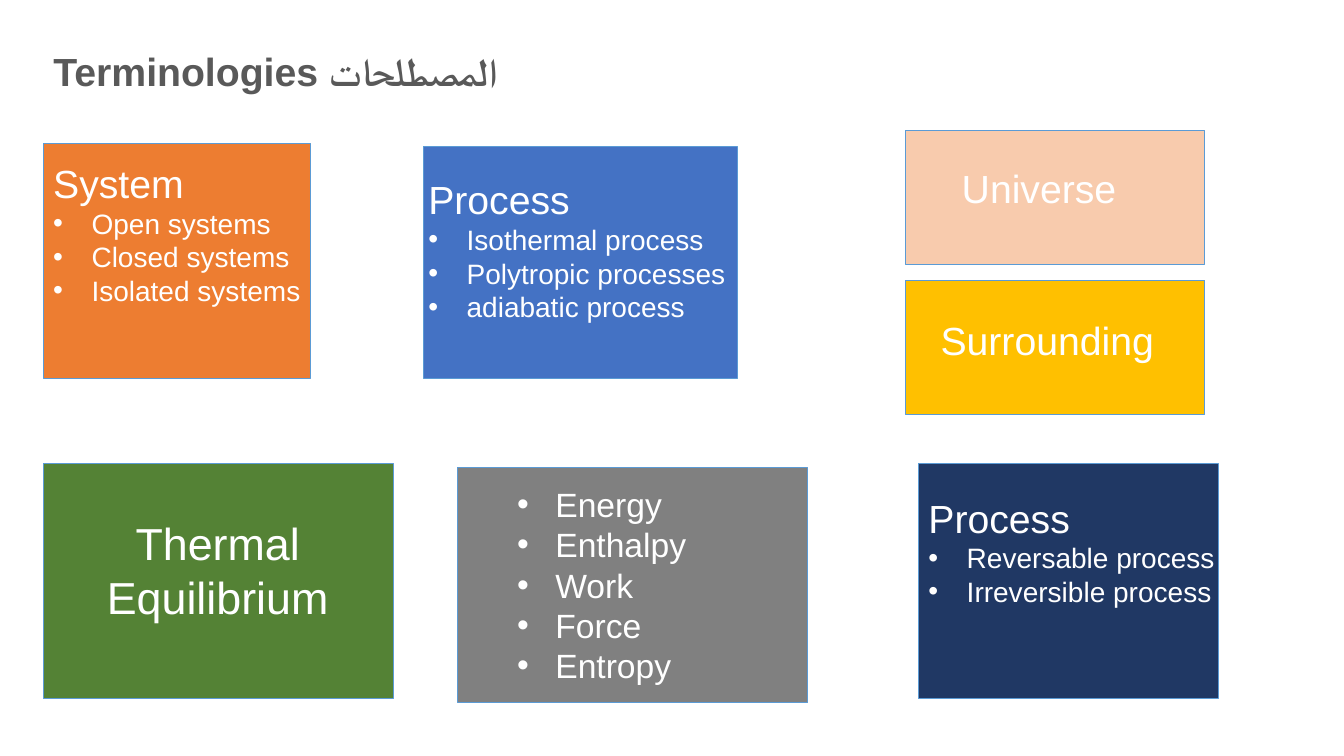
from dataclasses import dataclass
from lxml.etree import SubElement
from pptx import Presentation
from pptx.dml.color import RGBColor
from pptx.enum.shapes import MSO_SHAPE
from pptx.enum.text import MSO_ANCHOR, MSO_AUTO_SIZE, PP_ALIGN
from pptx.oxml.ns import qn
from pptx.util import Inches, Pt


@dataclass(frozen=True)
class Theme:
    """Colours, font and type sizes of the slide."""
    font: str = "Arial"
    title: str = "595959"
    text: str = "FFFFFF"
    edge: str = "5B9BD5"
    orange: str = "ED7D31"
    blue: str = "4472C4"
    gold: str = "FFC000"
    green: str = "548235"
    navy: str = "203864"
    gray: str = "808080"
    peach: str = "F8CBAD"
    large: int = 32
    head: int = 28
    list: int = 24
    item: int = 20


class Board:
    """Draws titles, cards and text on one slide."""

    def __init__(self, slide, theme):
        """Keep the slide and its theme."""
        self.slide = slide
        self.theme = theme

    def style(self, para, size, color, bold=False):
        """Set the font of a paragraph."""
        font = para.font
        font.name = self.theme.font
        font.size = Pt(size)
        font.bold = bold
        font.color.rgb = RGBColor.from_string(color)

    def title(self, text, place):
        """Fill and place the title."""
        shape = self.slide.shapes.title
        shape.left, shape.top, shape.width, shape.height = map(Inches, place)
        frame = shape.text_frame
        frame.text = text
        frame.word_wrap = True
        frame.auto_size = MSO_AUTO_SIZE.NONE
        frame.vertical_anchor = MSO_ANCHOR.TOP
        para = frame.paragraphs[0]
        para.alignment = PP_ALIGN.LEFT
        para.line_spacing = 1.0
        self.style(para, self.theme.head, self.theme.title, True)
        props = para._p.pPr.find(qn("a:defRPr"))
        SubElement(props, qn("a:cs"), typeface=self.theme.font)

    def card(self, color, place):
        """Draw a filled rectangle."""
        shape = self.slide.shapes.add_shape(
            MSO_SHAPE.RECTANGLE, *map(Inches, place))
        shape.shadow.inherit = False
        shape.fill.solid()
        shape.fill.fore_color.rgb = RGBColor.from_string(color)
        shape.line.color.rgb = RGBColor.from_string(self.theme.edge)
        shape.line.width = Pt(0.5)

    def bullet(self, para):
        """Give a paragraph a hanging bullet."""
        props = para._p.get_or_add_pPr()
        props.set("marL", str(Inches(0.38)))
        props.set("indent", str(-Inches(0.38)))
        SubElement(props, qn("a:buFont"), typeface=self.theme.font)
        SubElement(props, qn("a:buChar"), char="•")

    def text(self, place, heads=(), items=(), size=28, small=20, align=PP_ALIGN.LEFT):
        """Write heading lines, then bulleted items."""
        frame = self.slide.shapes.add_textbox(*map(Inches, place)).text_frame
        frame.word_wrap = True
        lines = [(head, False) for head in heads]
        lines += [(item, True) for item in items]
        for num, (line, dot) in enumerate(lines):
            para = frame.add_paragraph() if num else frame.paragraphs[0]
            para.text = line
            para.alignment = align
            if dot:
                self.bullet(para)
            self.style(para, small if dot else size, self.theme.text)


def main():
    """Build and save the slide."""
    deck = Presentation()
    deck.slide_width, deck.slide_height = Inches(13.33), Inches(7.5)
    theme = Theme()
    board = Board(deck.slides.add_slide(deck.slide_layouts[5]), theme)
    board.title("Terminologies المصطلحات", (0.43, 0.42, 6.66, 0.57))

    topics = [
        (theme.orange, (0.43, 1.42, 2.65, 2.33), (0.43, 1.53, 2.76, 1.99), "System",
         ["Open systems", "Closed systems", "Isolated systems"]),
        (theme.blue, (4.2, 1.45, 3.11, 2.3), (4.15, 1.69, 3.4, 1.92), "Process",
         ["Isothermal process", "Polytropic processes", "adiabatic process"]),
        (theme.gold, (8.98, 2.78, 2.97, 1.33), (9.23, 3.09, 3.11, 0.91),
         "Surrounding", []),
        (theme.navy, (9.11, 4.6, 2.97, 2.33), (9.11, 4.85, 3.11, 1.58), "Process",
         ["Reversable process", "Irreversible process"]),
        (theme.peach, (8.98, 1.29, 2.97, 1.33), (9.44, 1.58, 3.11, 0.91),
         "Universe", []),
    ]
    for color, card, place, head, items in topics:
        board.card(color, card)
        board.text(place, [head], items, theme.head, theme.item)

    board.card(theme.green, (0.43, 4.6, 3.47, 2.33))
    board.text((0.5, 5.07, 3.32, 1.18), ["Thermal", "Equilibrium"],
               size=theme.large, align=PP_ALIGN.CENTER)
    board.card(theme.gray, (4.54, 4.64, 3.47, 2.33))
    board.text((5.03, 4.75, 3.32, 2.12), small=theme.list,
               items=["Energy", "Enthalpy", "Work", "Force", "Entropy"])
    deck.save("out.pptx")


if __name__ == "__main__":
    main()
